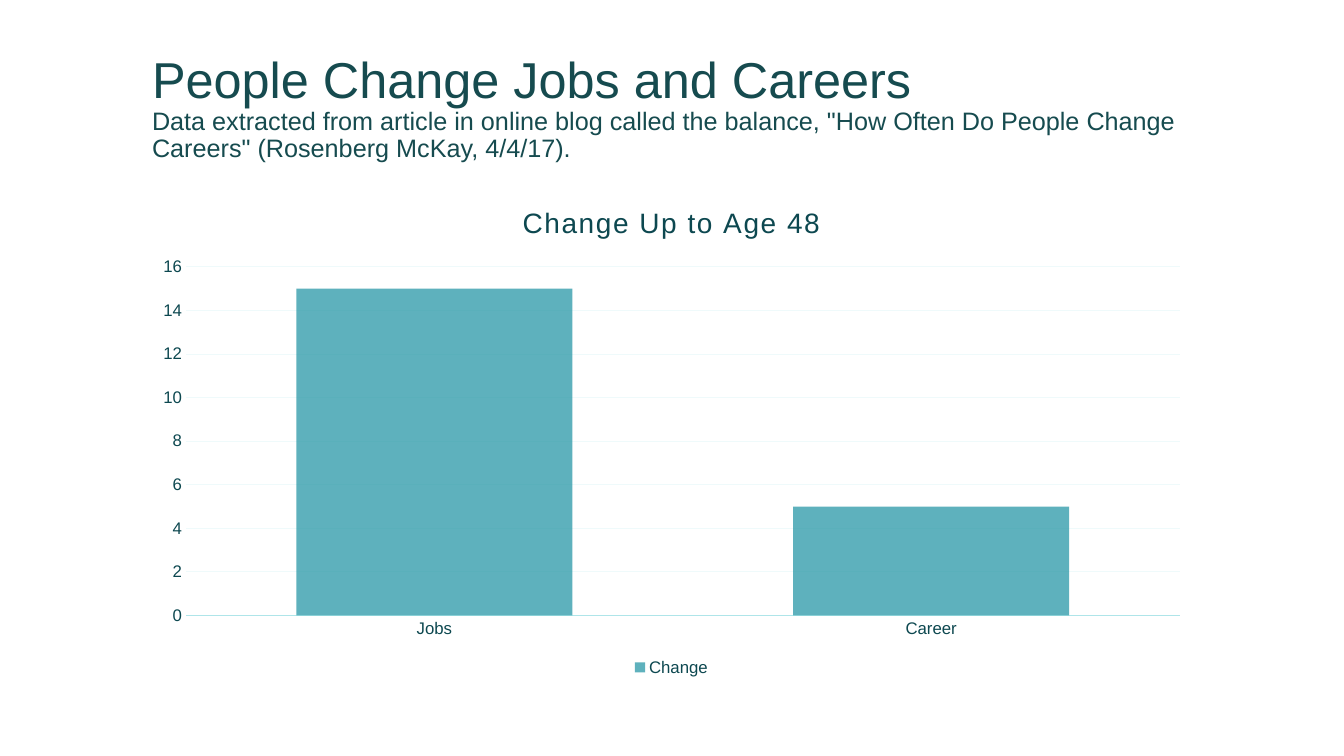
from dataclasses import dataclass

from pptx import Presentation
from pptx.chart.data import CategoryChartData
from pptx.dml.color import RGBColor
from pptx.enum.chart import XL_CHART_TYPE, XL_LEGEND_POSITION, XL_TICK_MARK
from pptx.enum.text import MSO_ANCHOR
from pptx.oxml.ns import qn
from pptx.text.text import Font
from pptx.util import Emu, Pt
from lxml.etree import SubElement

EMU_PER_PX = 9144
HEADING_TEAL = RGBColor(0x16, 0x4B, 0x4F)
CHART_TEAL = RGBColor(0x0D, 0x48, 0x50)
BAR_TEAL = RGBColor(0x1B, 0x91, 0xA1)
AXIS_TEAL = RGBColor(0xAF, 0xE5, 0xE9)
GRID_TEAL = RGBColor(0xEF, 0xFA, 0xFB)


@dataclass(frozen=True)
class HeadingLine:
    text: str
    size: int


HEADING = (
    HeadingLine("People Change Jobs and Careers", 36),
    HeadingLine(
        'Data extracted from article in online blog called the balance, '
        '"How Often Do People Change Careers" (Rosenberg McKay, 4/4/17).',
        18,
    ),
)


def px(length: int) -> Emu:
    return Emu(length * EMU_PER_PX)


def set_values(target: object, values: dict[str, object]) -> None:
    for name, value in values.items():
        setattr(target, name, value)


def style_font(font: Font, size: int, color: RGBColor) -> None:
    set_values(font, {"name": "Arial", "size": Pt(size), "bold": False})
    font.color.rgb = color


def draw_heading(slide) -> None:
    frame = slide.shapes.add_textbox(px(141), px(42), px(1050), px(125)).text_frame
    set_values(frame, {"word_wrap": True, "vertical_anchor": MSO_ANCHOR.BOTTOM})
    paragraph = frame.paragraphs[0]
    paragraph.line_spacing = 0.9
    for index, line in enumerate(HEADING):
        if index:
            paragraph.add_line_break()
        run = paragraph.add_run()
        run.text = line.text
        style_font(run.font, line.size, HEADING_TEAL)


def draw_change_chart(slide) -> None:
    change_data = CategoryChartData()
    change_data.categories = ["Jobs", "Career"]
    change_data.add_series("Change", [15, 5])
    chart = slide.shapes.add_chart(
        XL_CHART_TYPE.COLUMN_CLUSTERED, px(141), px(183), px(1050), px(492), change_data
    ).chart
    style_font(chart.font, 12, CHART_TEAL)

    chart.has_title = True
    caption = chart.chart_title.text_frame.paragraphs[0].add_run()
    caption.text = "Change Up to Age 48"
    style_font(caption.font, 20, CHART_TEAL)
    caption.font._element.set("spc", "100")

    chart.has_legend = True
    set_values(chart.legend, {
        "position": XL_LEGEND_POSITION.BOTTOM, "include_in_layout": False,
    })
    style_font(chart.legend.font, 12, CHART_TEAL)

    bars = chart.plots[0]
    set_values(bars, {"gap_width": 80, "overlap": 25, "vary_by_categories": False})
    change = bars.series[0]
    change.format.fill.solid()
    change.format.fill.fore_color.rgb = BAR_TEAL
    bar_color = change._element.find(f".//{qn('a:srgbClr')}")
    SubElement(bar_color, qn("a:alpha")).set("val", "70000")

    for axis in (chart.category_axis, chart.value_axis):
        set_values(axis, {
            "major_tick_mark": XL_TICK_MARK.NONE, "minor_tick_mark": XL_TICK_MARK.NONE,
        })
        style_font(axis.tick_labels.font, 12, CHART_TEAL)
    set_values(chart.value_axis, {
        "minimum_scale": 0, "maximum_scale": 16, "major_unit": 2,
        "has_major_gridlines": True,
    })
    chart.value_axis.format.line.fill.background()
    for line, color, width in (
        (chart.category_axis.format.line, AXIS_TEAL, 1.25),
        (chart.value_axis.major_gridlines.format.line, GRID_TEAL, 0.75),
    ):
        line.color.rgb = color
        line.width = Pt(width)


def main() -> None:
    presentation = Presentation()
    set_values(presentation, {"slide_width": px(1333), "slide_height": px(750)})
    slide = presentation.slides.add_slide(presentation.slide_layouts[6])
    draw_heading(slide)
    draw_change_chart(slide)
    presentation.save("out.pptx")


if __name__ == "__main__":
    main()
